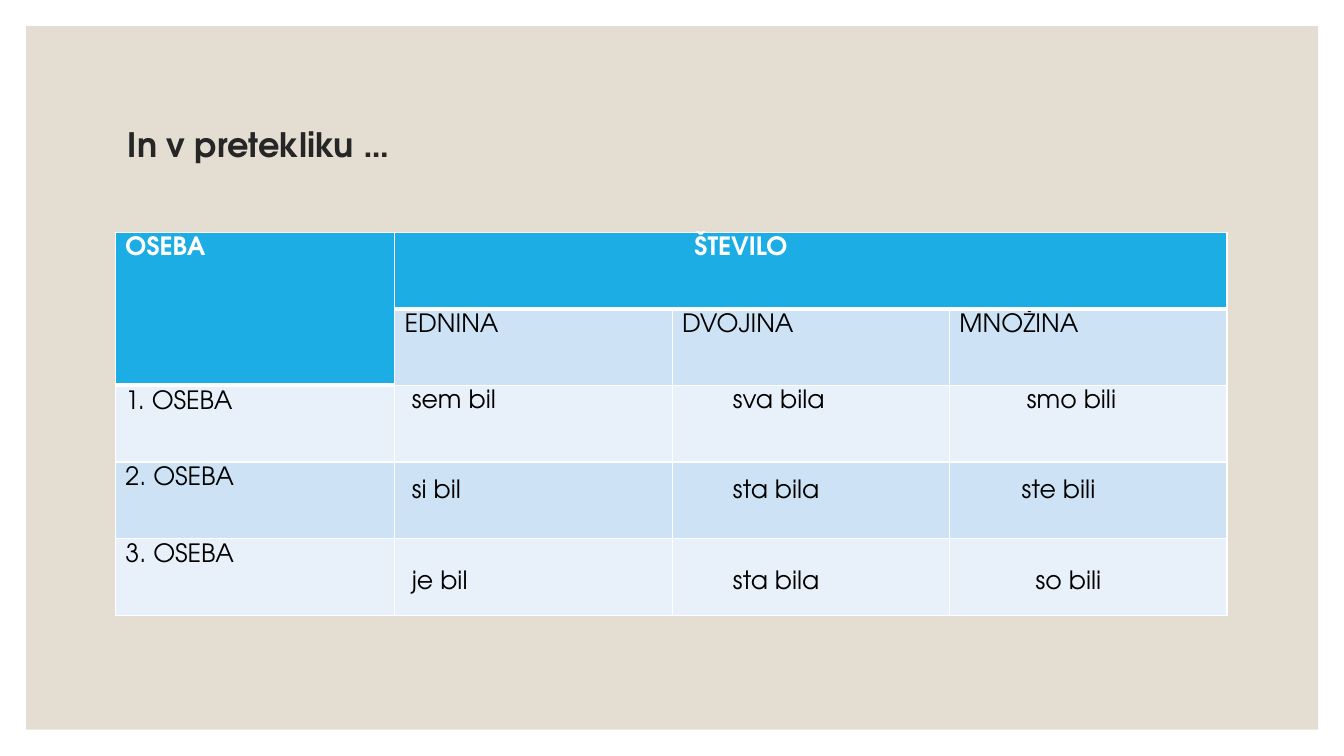
from lxml import etree
from pptx import Presentation, util as u
from pptx.dml.color import RGBColor
from pptx.enum import shapes, text
from pptx.oxml.ns import qn

COLORS = {
    "panel": "E3DED1", "title": "262626", "header": "1CADE4", "white": "FFFFFF",
    "dark band": "CDE3F5", "light band": "E8F1FA", "black": "000000",
}
FONT = "TeX Gyre Adventor"
LABELS = [
    ["OSEBA", "ŠTEVILO", "", ""],
    ["", "EDNINA", "DVOJINA", "MNOŽINA"],
    ["1. OSEBA", "", "", ""],
    ["2. OSEBA", "", "", ""],
    ["3. OSEBA", "", "", ""],
]
# Verb forms of each person, with the tab stop of the plural in cm
VERBS = [
    (["sem bil", "sva bila", "smo bili"], 15.5),
    (["si bil", "sta bila", "ste bili"], 15.37),
    (["je bil", "sta bila", "so bili"], 15.72),
]
DUAL_TAB = 8.09


def color(name):
    return RGBColor.from_string(COLORS[name])


class SlideBuilder:
    def __init__(self, slide):
        self.slide = slide

    def style(self, paragraph, size, color_name, bold=False):
        font = paragraph.font
        font.name, font.size, font.bold = FONT, u.Pt(size), bold
        font.color.rgb = color(color_name)

    def panel(self, left, top, width, height):
        shape = self.slide.shapes.add_shape(
            shapes.MSO_SHAPE.RECTANGLE, *map(u.Cm, (left, top, width, height)))
        shape.shadow.inherit = False
        shape.fill.solid()
        shape.fill.fore_color.rgb = color("panel")
        shape.line.fill.background()

    def text_box(self, left, top, width, height):
        box = self.slide.shapes.add_textbox(*map(u.Cm, (left, top, width, height)))
        box.text_frame.word_wrap = True
        return box.text_frame

    def title(self, words, *place):
        frame = self.text_box(*place)
        frame.vertical_anchor = text.MSO_ANCHOR.MIDDLE
        paragraph = frame.paragraphs[0]
        paragraph.text = words
        paragraph.line_spacing = 0.9
        self.style(paragraph, 24, "title", bold=True)

    def tabbed_lines(self, lines, gap, *place):
        """Write one paragraph per line, its columns set by tab stops."""
        frame = self.text_box(*place)
        for index, (words, last_tab) in enumerate(lines):
            paragraph = frame.add_paragraph() if index else frame.paragraphs[0]
            paragraph.text = "\t".join(words)
            paragraph.space_before = u.Pt(gap if index else 0)
            self.style(paragraph, 18, "black")
            tabs = etree.Element(qn("a:tabLst"))
            # Tab stops come before the default run properties
            paragraph._p.pPr.find(qn("a:defRPr")).addprevious(tabs)
            for stop in (DUAL_TAB, last_tab):
                etree.SubElement(tabs, qn("a:tab"), pos=str(u.Cm(stop)), algn="l")

    def borders(self, cell, **widths):
        properties = cell._tc.get_or_add_tcPr()
        for side, width in widths.items():
            line = etree.SubElement(properties, qn(f"a:ln{side}"), w=str(u.Pt(width)))
            fill = etree.SubElement(line, qn("a:solidFill"))
            etree.SubElement(fill, qn("a:srgbClr"), val=COLORS["white"])

    def table(self, labels, left, top, widths, row_height):
        table = self.slide.shapes.add_table(
            len(labels), len(widths), u.Cm(left), u.Cm(top),
            u.Cm(sum(widths)), u.Cm(row_height * len(labels))).table
        for column, width in zip(table.columns, widths):
            column.width = u.Cm(width)
        for row_index, row in enumerate(labels):
            table.rows[row_index].height = u.Cm(row_height)
            for column_index, label in enumerate(row):
                cell = table.cell(row_index, column_index)
                header = row_index == 0 or (row_index, column_index) == (1, 0)
                band = "dark band" if row_index % 2 else "light band"
                above = 3 if (row_index, min(column_index, 1)) in ((1, 1), (2, 0)) else 1
                self.borders(cell, L=1, R=1, T=above, B=3 if header else 1)
                cell.fill.solid()
                cell.fill.fore_color.rgb = color("header" if header else band)
                cell.margin_left = cell.margin_right = u.Cm(0.25)
                cell.margin_top = cell.margin_bottom = u.Cm(0.13)
                cell.text = label
                self.style(cell.text_frame.paragraphs[0], 18,
                           "white" if header else "black", bold=header)
        table.cell(0, 0).merge(table.cell(1, 0))
        table.cell(0, 1).merge(table.cell(0, 3))
        table.cell(0, 1).margin_left = u.Cm(7.55)


def main():
    presentation = Presentation()
    presentation.slide_width, presentation.slide_height = u.Cm(33.87), u.Cm(19.05)
    builder = SlideBuilder(presentation.slides.add_slide(presentation.slide_layouts[6]))
    builder.panel(0.66, 0.66, 32.56, 17.73)
    builder.title("In v pretekliku …", 2.97, 1.78, 27.94, 3.81)
    builder.table(LABELS, 2.91, 5.85, [7.04, 6.99, 6.99, 6.99], 1.93)
    builder.tabbed_lines(VERBS, 43, 10.13, 9.53, 18.42, 5.64)
    presentation.save("out.pptx")


if __name__ == "__main__":
    main()
